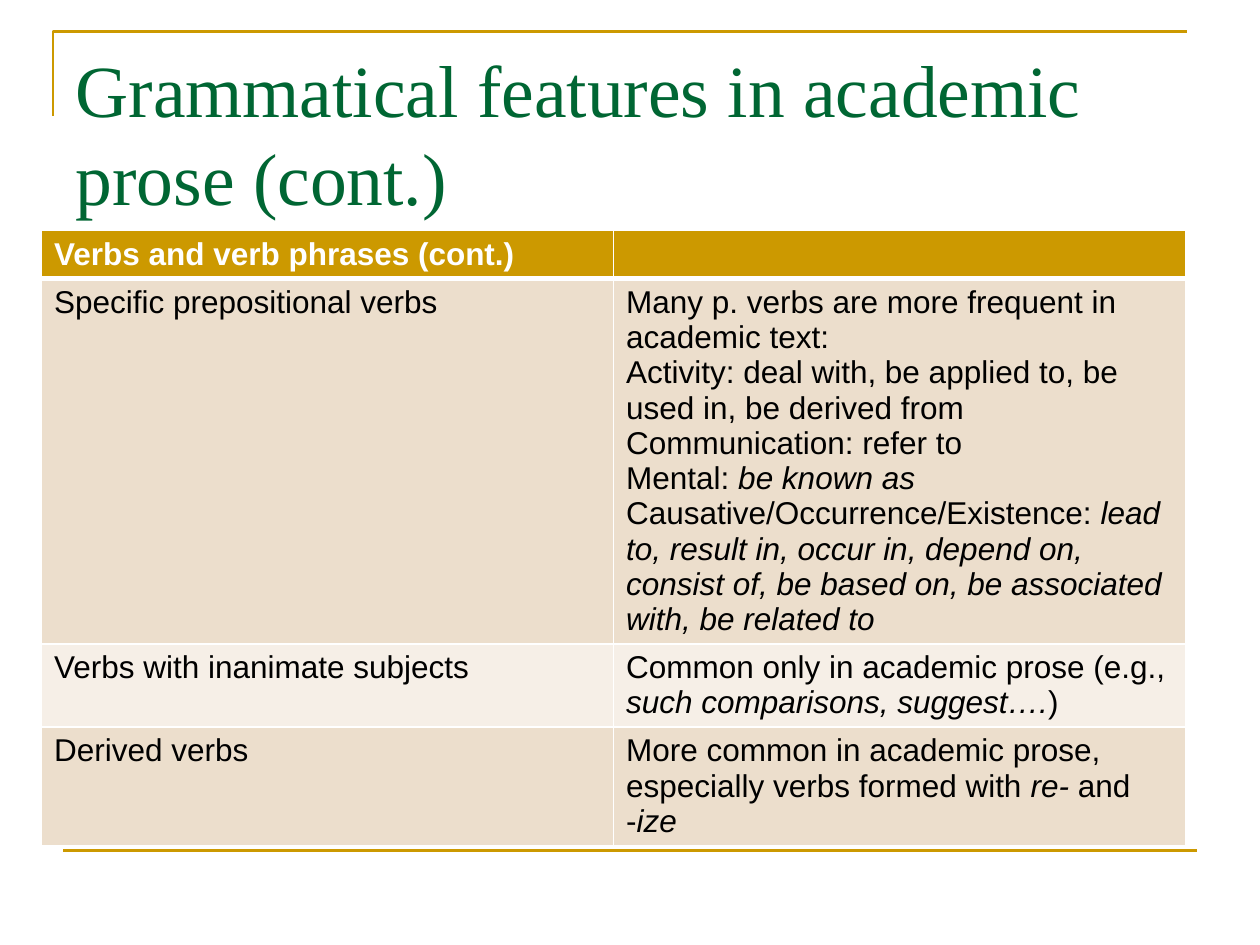
from lxml import etree
from pptx import Presentation
from pptx.dml.color import RGBColor
from pptx.enum.shapes import MSO_CONNECTOR
from pptx.enum.text import MSO_ANCHOR, MSO_AUTO_SIZE, PP_ALIGN
from pptx.oxml.ns import qn
from pptx.util import Inches, Pt

LINE = MSO_CONNECTOR.STRAIGHT
TOP = MSO_ANCHOR.TOP
LEFT = PP_ALIGN.LEFT
FIXED = MSO_AUTO_SIZE.NONE
GOLD, GREEN, WHITE, BLACK = "CC9900", "006633", "FFFFFF", "000000"
BANDS = ["ECDECC", "F6EFE7"]

HEAD = "Verbs and verb phrases (cont.)"
ROWS = [
    ("Specific prepositional verbs", [
        ["Many p. verbs are more frequent in academic text:"],
        ["Activity: deal with, be applied to, be used in, be derived from"],
        ["Communication: refer to"],
        ["Mental: ", "be known as"],
        ["Causative/Occurrence/Existence: ",
         "lead to, result in, occur in, depend on, consist of, "
         "be based on, be associated with, be related to"],
    ]),
    ("Verbs with inanimate subjects", [
        ["Common only in academic prose (e.g., ",
         "such comparisons, suggest….", ")"],
    ]),
    ("Derived verbs", [
        ["More common in academic prose, especially verbs formed with ",
         "re- ", "and -", "ize"],
    ]),
]
HEIGHTS = [0.33, 2.54, 0.57, 0.82]


def color(text):
    return RGBColor.from_string(text)


def write(para, text, font="Arial", size=18, fill=BLACK, bold=False, slant=False):
    run = para.add_run()
    run.text = text
    face = run.font
    face.name, face.size = font, Pt(size)
    face.bold, face.italic = bold, slant
    face.color.rgb = color(fill)


def style(line):
    line.color.rgb = color(GOLD)
    line.width = Pt(1.5)


def add_frame(slide, left, top, width, height):
    pen = slide.shapes.build_freeform(Inches(left), Inches(top + height))
    pen.add_line_segments(
        [(Inches(left), Inches(top)), (Inches(left + width), Inches(top))],
        close=False)
    shape = pen.convert_to_shape()
    shape.shadow.inherit = False
    shape.fill.background()
    style(shape.line)


def add_rule(slide, left, top, width):
    rule = slide.shapes.add_connector(
        LINE, Inches(left), Inches(top), Inches(left + width), Inches(top))
    style(rule.line)
    etree.SubElement(rule._element.spPr, qn("a:effectLst"))


def add_title(slide, left, top, width, height):
    title = slide.shapes.title
    title.left, title.top = Inches(left), Inches(top)
    title.width, title.height = Inches(width), Inches(height)
    frame = title.text_frame
    frame.auto_size = FIXED
    frame.word_wrap = True
    frame.vertical_anchor = TOP
    frame.margin_top = Inches(0.05)
    para = frame.paragraphs[0]
    para.alignment = LEFT
    para.line_spacing = 1.0
    write(para, "Grammatical features in academic prose (cont.)",
          font="Times New Roman", size=42, fill=GREEN)


def add_edge(cell, side, width):
    props = cell._tc.get_or_add_tcPr()
    edge = etree.SubElement(props, qn("a:ln" + side), w=str(Pt(width)))
    fill = etree.SubElement(edge, qn("a:solidFill"))
    etree.SubElement(fill, qn("a:srgbClr"), val=WHITE)


def paint(cell, fill, top=1, bottom=1):
    for side, width in (("L", 1), ("R", 1), ("T", top), ("B", bottom)):
        add_edge(cell, side, width)
    cell.fill.solid()
    cell.fill.fore_color.rgb = color(fill)


def set_blank(cell):
    para = cell.text_frame.paragraphs[0]
    end = etree.SubElement(para._p, qn("a:endParaRPr"), sz="1800")
    etree.SubElement(end, qn("a:latin"), typeface="Arial")


def fill_cell(cell, paras):
    frame = cell.text_frame
    for i, parts in enumerate(paras):
        para = frame.add_paragraph() if i else frame.paragraphs[0]
        for j, text in enumerate(parts):
            write(para, text, slant=j % 2 == 1)


def add_grid(slide, left, top, width, height):
    shape = slide.shapes.add_table(
        len(HEIGHTS), 2, Inches(left), Inches(top), Inches(width), Inches(height))
    table = shape.table
    for row, tall in zip(table.rows, HEIGHTS):
        row.height = Inches(tall)
    for col in table.columns:
        col.width = Inches(width / 2)
    for i in range(2):
        paint(table.cell(0, i), GOLD, bottom=3)
    write(table.cell(0, 0).text_frame.paragraphs[0], HEAD, fill=WHITE, bold=True)
    set_blank(table.cell(0, 1))
    for i, (name, paras) in enumerate(ROWS, 1):
        for j, content in enumerate(([[name]], paras)):
            cell = table.cell(i, j)
            paint(cell, BANDS[(i - 1) % 2], top=3 if i == 1 else 1)
            fill_cell(cell, content)


def main():
    deck = Presentation()
    deck.slide_width, deck.slide_height = Inches(10), Inches(7.5)
    slide = deck.slides.add_slide(deck.slide_layouts[5])
    add_frame(slide, 0.42, 0.25, 9, 0.67)
    add_rule(slide, 0.5, 6.75, 9)
    add_title(slide, 0.5, 0.3, 9, 1.25)
    add_grid(slide, 0.33, 1.83, 9.08, sum(HEIGHTS))
    deck.save("out.pptx")


if __name__ == "__main__":
    main()
